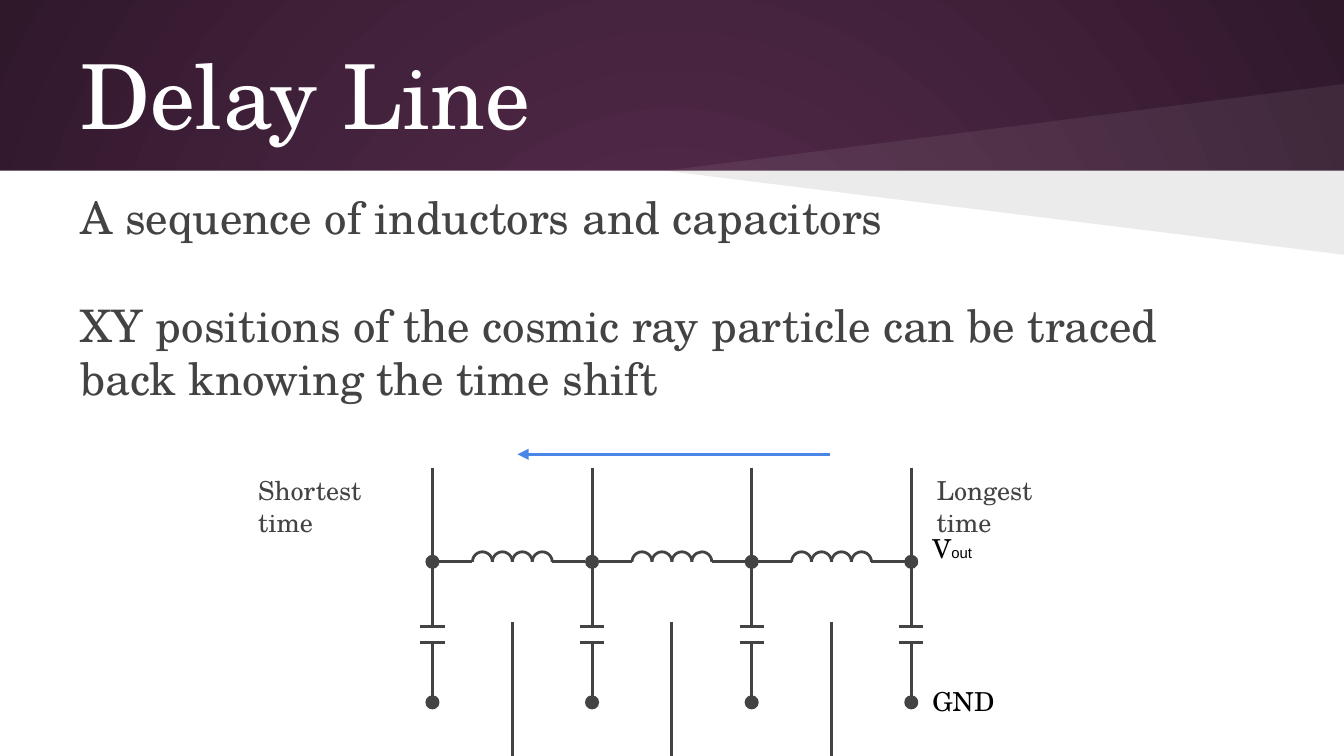
import pptx
import pptx.util
import pptx.dml.color
import pptx.enum.shapes
import pptx.enum.text
import pptx.oxml
import pptx.oxml.ns
from lxml import etree

Pt = pptx.util.Pt
Kind = pptx.enum.shapes.MSO_SHAPE
Anchor = pptx.enum.text.MSO_ANCHOR
qn = pptx.oxml.ns.qn
SERIF = "TeX Gyre Schola"
GREY = "434343"
WHITE = "FFFFFF"


def hue(code):
    return pptx.dml.color.RGBColor.from_string(code)


def paint(shape, fill=None, line=None, alpha=None):
    shape.shadow.inherit = False
    if fill:
        shape.fill.solid()
        shape.fill.fore_color.rgb = hue(fill)
    else:
        shape.fill.background()
    if alpha:
        color = shape.fill._xPr.find(qn("a:solidFill"))[0]
        etree.SubElement(color, qn("a:alpha"), val=str(alpha * 1000))
    if line:
        shape.line.color.rgb = hue(line)
        shape.line.width = Pt(1.5)
    else:
        shape.line.fill.background()


def wire(shapes, x1, y1, x2, y2, color=GREY, head=None):
    link = shapes.add_connector(
        pptx.enum.shapes.MSO_CONNECTOR.STRAIGHT, Pt(x1), Pt(y1), Pt(x2), Pt(y2))
    link.line.color.rgb = hue(color)
    link.line.width = Pt(1.5)
    props = link.element.spPr
    if head:
        etree.SubElement(props.find(qn("a:ln")), qn("a:headEnd"), type=head)
    etree.SubElement(props, qn("a:effectLst"))


def write(shapes, box, paras, size=14, color=GREY, anchor=Anchor.TOP, gap=0):
    frame = shapes.add_textbox(*map(Pt, box)).text_frame
    frame.word_wrap = True
    frame.vertical_anchor = anchor
    for side in ("left", "top", "right", "bottom"):
        setattr(frame, "margin_" + side, Pt(7.2))
    for i, runs in enumerate(paras):
        para = frame.add_paragraph() if i else frame.paragraphs[0]
        if i:
            para.space_before = Pt(gap)
        for text, *style in runs:
            run = para.add_run()
            run.text = text
            run.font.name, pts = style or (SERIF, size)
            run.font.size = Pt(pts)
            run.font.color.rgb = hue(color)


def back(slide):
    fill = slide.background.fill
    fill.gradient()
    for stop, code, place in zip(fill.gradient_stops, ("592D50", "30182B"), (0, 1)):
        stop.color.rgb = hue(code)
        stop.position = place
    grad = slide.element.find(".//" + qn("a:gradFill"))
    grad.remove(grad.find(qn("a:lin")))
    ring = etree.SubElement(grad, qn("a:path"), path="circle")
    etree.SubElement(ring, qn("a:fillToRect"), l="50000", t="50000", r="50000", b="50000")


def panel(shapes, x, y, w, h):
    paint(shapes.add_shape(Kind.RECTANGLE, Pt(x), Pt(y), Pt(w), Pt(h)), WHITE)
    tip = x + 356.4
    for rise, color, alpha in ((-46.5, WHITE, 7), (45, "000000", 8)):
        pen = shapes.build_freeform(Pt(x + w), Pt(y))
        pen.add_line_segments([(Pt(tip), Pt(y)), (Pt(x + w), Pt(y + rise))])
        paint(pen.convert_to_shape(), color, alpha=alpha)


def dot(shapes, x, y, size=6):
    half = size / 2
    paint(shapes.add_shape(Kind.OVAL, Pt(x - half), Pt(y - half), Pt(size), Pt(size)),
          GREY, GREY)


def branch(shapes, x, y):
    wire(shapes, x, y, x, y + 53.4)
    wire(shapes, x, y + 53.4, x, y + 84.9)
    for plate in (84.9, 93.7):
        wire(shapes, x - 6.5, y + plate, x + 6.5, y + plate)
    wire(shapes, x, y + 93.7, x, y + 126)
    for node in (50.4, 125.7):
        dot(shapes, x, y + node)


def coil(shapes, x, y, w):
    turn = w / 8
    level = y + 50.4
    wire(shapes, x + 3.6, level, x + w / 4, level)
    for i in range(4):
        arc = shapes.add_shape(Kind.ARC, Pt(x + w / 4 + i * turn),
                               Pt(level - turn / 2), Pt(turn), Pt(turn))
        arc.adjustments[0] = 108
        arc.adjustments[1] = 0
        paint(arc, line=GREY)
    wire(shapes, x + w * 3 / 4, level, x + w - 3.6, level)
    wire(shapes, x + w / 2, y + 82.8, x + w / 2, y + 168.5)


def ladder(shapes, x, y, w, count=4):
    step = w / (count - 1)
    group = shapes.add_group_shape().shapes
    for i in range(count):
        branch(group, x + i * step, y)
    for i in range(count - 1):
        coil(group, x + i * step, y, step)


def labels(shapes, x, y):
    write(shapes, (x - 100.5, y - 3.6, 96, 46), [[("Shortest time",)]])
    write(shapes, (x + 263, y - 3.6, 96, 46), [[("Longest time",)]])
    wire(shapes, x + 45.5, y - 7.2, x + 213.2, y - 7.2, "4A86E8", "triangle")
    write(shapes, (x + 260.7, y + 33.1, 49.7, 8.6),
          [[("V",), ("out", "Arial", 8)]], color="000000")
    write(shapes, (x + 260.7, y + 109.4, 65.5, 31.7), [[("GND",)]], color="000000")


def main():
    deck = pptx.Presentation()
    deck.slide_width, deck.slide_height = Pt(720), Pt(405)
    slide = deck.slides.add_slide(deck.slide_layouts[6])
    shapes = slide.shapes
    back(slide)
    panel(shapes, 0, 91.5, 720, 313.5)
    write(shapes, (36, 16.5, 648, 67.7), [[("Delay Line",)]],
          size=48, color=WHITE, anchor=Anchor.MIDDLE)
    write(shapes, (36, 94.3, 648, 145.4),
          [[("A sequence of inductors and capacitors",)],
           [("XY positions of the cosmic ray particle can be traced "
             "back knowing the time shift",)]], size=24, gap=29)
    ladder(shapes, 231.7, 250.6, 256.5)
    labels(shapes, 231.7, 250.6)
    deck.save("out.pptx")


if __name__ == "__main__":
    main()
